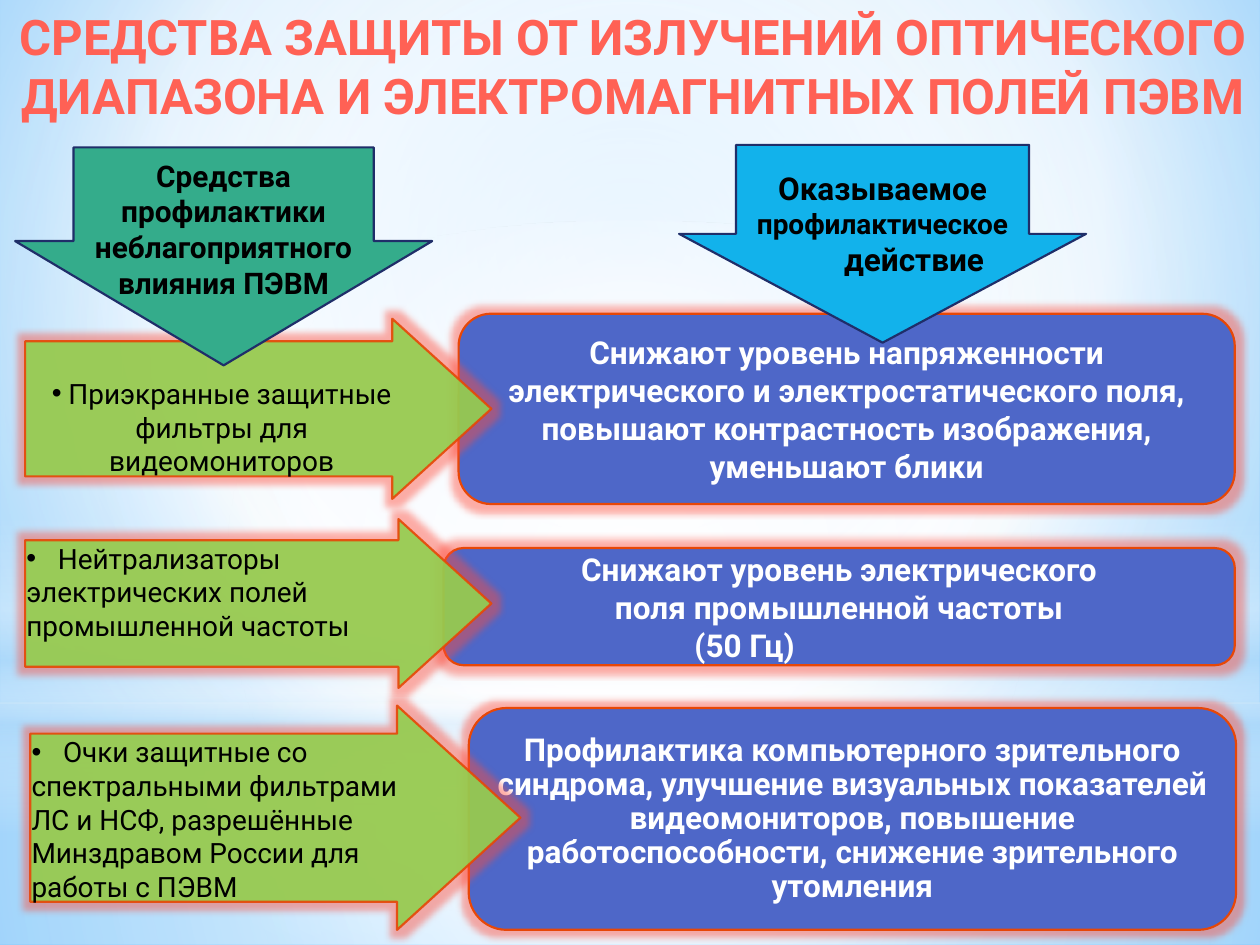
from lxml.etree import SubElement
from pptx import Presentation
from pptx.dml.color import RGBColor
from pptx.enum.shapes import MSO_SHAPE as Shape
from pptx.enum.text import MSO_ANCHOR as Anchor, PP_ALIGN as Align
from pptx.oxml.ns import qn
from pptx.util import Inches, Pt

WIDTH, HEIGHT = Inches(10), Inches(7.5)
COLUMN, ROW = WIDTH / 100, HEIGHT / 75
FONT = "Roboto"
BLACK, WHITE, EDGE, NAVY = "000000", "FFFFFF", "E74707", "1F2E69"

TITLE = "СРЕДСТВА ЗАЩИТЫ ОТ ИЗЛУЧЕНИЙ ОПТИЧЕСКОГО ДИАПАЗОНА И ЭЛЕКТРОМАГНИТНЫХ ПОЛЕЙ ПЭВМ"

CENTRE = (50, 50, 50, 50)
BACKDROP = [(0, "9ED5FF", 100), (60, WHITE, 100), (100, "5BB9FF", 100)]
HAZE = [
    (Shape.RECTANGLE, (0, 55.8, 100, 19.2), CENTRE,
     [(0, WHITE, 91), (37, WHITE, 76), (100, "B4DCFA", 79)]),
    (Shape.RECTANGLE, (0, 0, 100, 55.8), CENTRE,
     [(0, WHITE, 89), (48, WHITE, 62), (100, "B4DCFA", 79)]),
    (Shape.RECTANGLE, (0, 41.2, 100, 25), None,
     [(0, WHITE, 0), (29, WHITE, 30), (45, "B4DCFA", 40),
      (55, WHITE, 26), (65, "B4DCFA", 60), (100, WHITE, 0)]),
    (Shape.OVAL, (0, 17.5, 100, 55.8), CENTRE, [(0, WHITE, 100), (56, WHITE, 0)]),
]

EFFECTS = [
    ((36.4, 24.9, 61.6, 15.1), 1, [
        (["Снижают уровень напряженности",
          "электрического и электростатического поля,",
          "повышают контрастность изображения,", "уменьшают блики"], 0)]),
    ((35.2, 43.5, 62.8, 9.3), 1, [
        (["Снижают уровень электрического", "поля промышленной частоты"], 0),
        (["(50 Гц)"], 1.5)]),
    ((37.2, 56.2, 60.9, 17.6), 0.9, [
        (["Профилактика компьютерного зрительного синдрома, улучшение визуальных "
          "показателей видеомониторов, повышение работоспособности, снижение "
          "зрительного утомления"], 0)]),
]

MEANS = [
    ((2, 25.3, 37, 14.3), 0.28, Align.CENTER,
     " Приэкранные защитные фильтры для видеомониторов"),
    ((2, 41.2, 37, 13.4), 0.01, Align.LEFT,
     "\tНейтрализаторы электрических полей промышленной частоты"),
    ((2.4, 56, 38.9, 17.8), 0.01, Align.LEFT,
     "\tОчки защитные со спектральными фильтрами ЛС и НСФ, разрешённые "
     "Минздравом России для работы с ПЭВМ"),
]

HEADINGS = [
    ((1.2, 11.7, 33.1, 17.3), (0.72, 0.57), "34AC8B", 0.32,
     [("Средства профилактики неблагоприятного влияния ПЭВМ", 17, 0)]),
    ((53.9, 11.5, 32.3, 15.7), (0.72, 0.55), "12B2EB", 0.35,
     [("Оказываемое", 18, 0), ("профилактическое", 16, 0), ("действие", 18, 0.5)]),
]


def colour(value):
    return RGBColor.from_string(value)


def place(cells):
    left, top, width, height = cells
    return [int(n) for n in (left * COLUMN, top * ROW, width * COLUMN, height * ROW)]


def set_alpha(node, percent):
    SubElement(node, qn("a:alpha"), val=str(percent * 1000))


def paint_gradient(fill, holder, stops, focus):
    fill.gradient()
    gradient = holder.find(qn("a:gradFill"))
    for child in list(gradient):
        gradient.remove(child)
    stop_list = SubElement(gradient, qn("a:gsLst"))
    for position, value, opacity in stops:
        stop = SubElement(stop_list, qn("a:gs"), pos=str(position * 1000))
        set_alpha(SubElement(stop, qn("a:srgbClr"), val=value), opacity)
    if focus:
        way = SubElement(gradient, qn("a:path"), {"path": "circle"})
        sides = {side: str(share * 1000) for side, share in zip("ltrb", focus)}
        SubElement(way, qn("a:fillToRect"), sides)
    else:
        SubElement(gradient, qn("a:lin"), ang="5400000", scaled="0")


def add_block(slide, kind, cells, fill, edge, adjustments):
    block = slide.shapes.add_shape(kind, *place(cells))
    for index, value in enumerate(adjustments):
        block.adjustments[index] = value
    block.fill.solid()
    block.fill.fore_color.rgb = colour(fill)
    block.line.color.rgb = colour(edge)
    block.line.width = Pt(1.25)
    block.shadow.inherit = False
    return block


def add_glow(block):
    effects = block.element.spPr.find(qn("a:effectLst"))
    glow = SubElement(effects, qn("a:glow"), rad=str(Pt(8)))
    set_alpha(SubElement(glow, qn("a:srgbClr"), val="FF4B3A"), 45)


def set_frame(holder, anchor, insets):
    frame = holder.text_frame
    frame.word_wrap = True
    frame.vertical_anchor = anchor
    frame.margin_left, frame.margin_top, frame.margin_right, frame.margin_bottom = map(Inches, insets)
    return frame


def next_paragraph(frame, index, align=Align.CENTER):
    paragraph = frame.add_paragraph() if index else frame.paragraphs[0]
    paragraph.alignment = align
    return paragraph


def write(paragraph, words, size, ink, bold=True):
    run = paragraph.add_run()
    run.text = words
    run.font.name, run.font.size, run.font.bold = FONT, Pt(size), bold
    run.font.color.rgb = colour(ink)


def add_bullet(paragraph):
    props = paragraph._p.get_or_add_pPr()
    props.set("marL", "0")
    props.set("indent", "0")
    SubElement(props, qn("a:buFont"), typeface="Arial")
    SubElement(props, qn("a:buChar"), char="•")
    tabs = SubElement(props, qn("a:tabLst"))
    SubElement(tabs, qn("a:tab"), pos=str(Inches(0.25)), algn="l")


def main():
    deck = Presentation()
    deck.slide_width, deck.slide_height = WIDTH, HEIGHT
    slide = deck.slides.add_slide(deck.slide_layouts[6])

    backdrop = slide.background.fill
    backdrop.solid()
    paint_gradient(backdrop, slide.element.find(".//" + qn("p:bgPr")), BACKDROP, (20, 10, 20, 60))
    for kind, cells, focus, stops in HAZE:
        veil = slide.shapes.add_shape(kind, *place(cells))
        veil.line.fill.background()
        veil.shadow.inherit = False
        paint_gradient(veil.fill, veil.element.spPr, stops, focus)

    heading = slide.shapes.add_textbox(*place((0.4, 0, 99.6, 10.2)))
    frame = set_frame(heading, Anchor.TOP, (0.05, 0.05, 0.05, 0.05))
    write(next_paragraph(frame, 0), TITLE, 28, "FF6155")

    for cells, spacing, parts in EFFECTS:
        panel = add_block(slide, Shape.ROUNDED_RECTANGLE, cells, "4E67C8", EDGE, [0.17])
        add_glow(panel)
        frame = set_frame(panel, Anchor.MIDDLE, (0.08, 0.05, 0.08, 0.05))
        for index, (lines, right_margin) in enumerate(parts):
            paragraph = next_paragraph(frame, index)
            paragraph.line_spacing = spacing
            paragraph._p.get_or_add_pPr().set("marR", str(Inches(right_margin)))
            for number, line in enumerate(lines):
                if number:
                    paragraph.add_line_break()
                write(paragraph, line, 18, WHITE)

    for cells, top_inset, align, words in MEANS:
        arrow = add_block(slide, Shape.RIGHT_ARROW, cells, "92D050", EDGE, [0.75, 0.55])
        for node in arrow.element.spPr.iter(qn("a:srgbClr")):
            set_alpha(node, 90)
        add_glow(arrow)
        frame = set_frame(arrow, Anchor.TOP, (0.01, top_inset, 0, 0))
        paragraph = next_paragraph(frame, 0, align)
        add_bullet(paragraph)
        write(paragraph, words, 16, BLACK, False)

    for cells, adjustments, fill, top_inset, lines in HEADINGS:
        pointer = add_block(slide, Shape.DOWN_ARROW, cells, fill, NAVY, adjustments)
        frame = set_frame(pointer, Anchor.MIDDLE, (0.1, top_inset, 0.1, 0.05))
        for index, (words, size, left_margin) in enumerate(lines):
            paragraph = next_paragraph(frame, index)
            paragraph._p.get_or_add_pPr().set("marL", str(Inches(left_margin)))
            write(paragraph, words, size, BLACK)

    deck.save("out.pptx")


if __name__ == "__main__":
    main()
